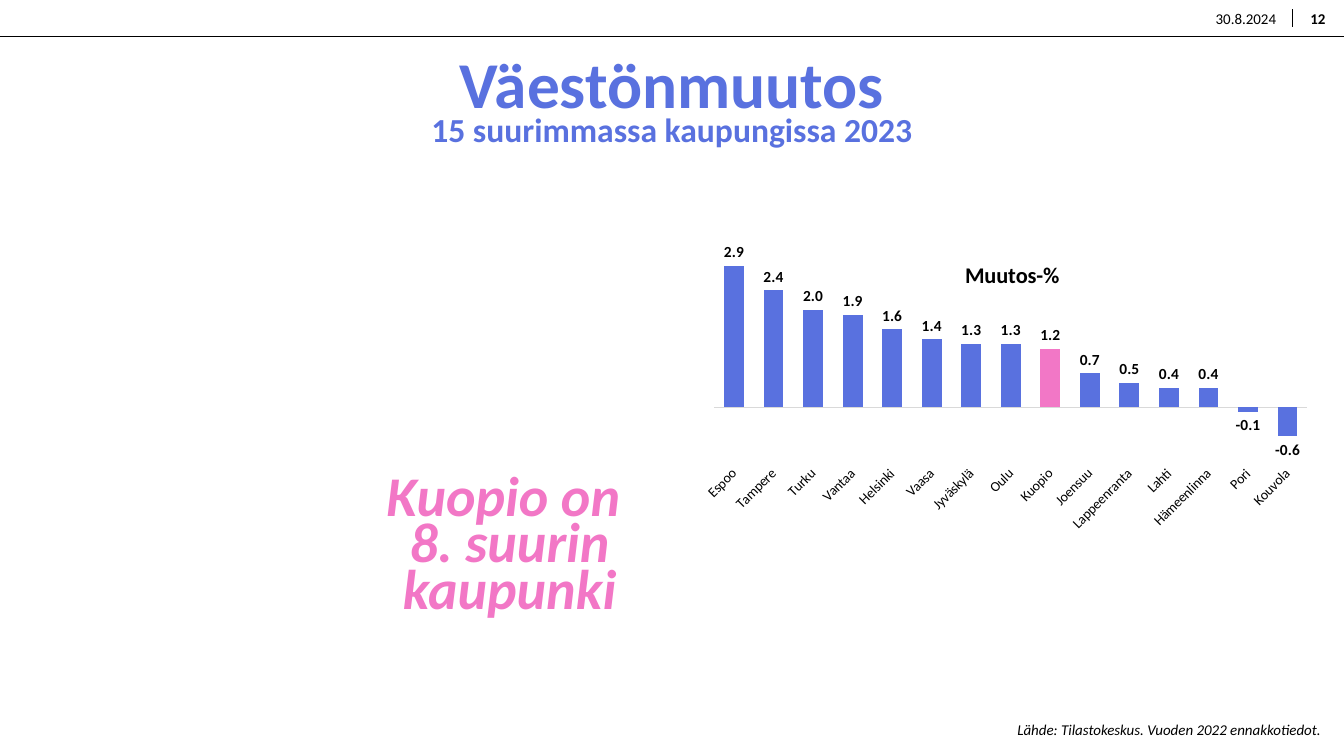
from lxml import etree
from pptx import Presentation
from pptx.chart.data import CategoryChartData
from pptx.dml.color import RGBColor
from pptx.enum.chart import XL_CHART_TYPE, XL_LABEL_POSITION, XL_TICK_LABEL_POSITION, XL_TICK_MARK
from pptx.enum.shapes import MSO_CONNECTOR
from pptx.enum.text import MSO_ANCHOR, PP_ALIGN
from pptx.oxml import parse_xml
from pptx.oxml.ns import nsdecls, qn
from pptx.util import Pt

COLUMNS = XL_CHART_TYPE.COLUMN_CLUSTERED
OUTSIDE = XL_LABEL_POSITION.OUTSIDE_END
LOW = XL_TICK_LABEL_POSITION.LOW
NO_TICK = XL_TICK_MARK.NONE
STRAIGHT = MSO_CONNECTOR.STRAIGHT
TOP, MIDDLE = MSO_ANCHOR.TOP, MSO_ANCHOR.MIDDLE
CENTER, RIGHT = PP_ALIGN.CENTER, PP_ALIGN.RIGHT

FONT = "Calibri"
BLACK, WHITE, GREY = "000000", "FFFFFF", "D9D9D9"
BLUE, PINK = "5971DF", "F277C6"
WIDTH, HEIGHT = 1344, 756
HEADER_HEIGHT = 36
DIVIDER_X = 1292

HEADER_LINES = [
    (0, HEADER_HEIGHT, WIDTH, HEADER_HEIGHT),
    (DIVIDER_X, 27, DIVIDER_X, 9),
]
HEADER_STYLE = {"size": 10.7, "anchor": MIDDLE, "inset": False}
TEXTS = [
    ((1200, 0, 92, HEADER_HEIGHT), ["30.8.2024"], HEADER_STYLE),
    ((DIVIDER_X, 0, 52, HEADER_HEIGHT), ["12"], {**HEADER_STYLE, "bold": True}),
    ((0, 47, WIDTH, 93), ["Väestönmuutos"],
     {"size": 46.7, "color": BLUE, "bold": True, "spacing": 0.9}),
    ((882, 716, 449, 28), ["Lähde: Tilastokeskus. Vuoden 2022 ennakkotiedot."],
     {"size": 10.7, "italic": True, "align": RIGHT}),
    ((346, 476, 327, 153), ["Kuopio on ", "8. suurin kaupunki"],
     {"size": 40, "color": PINK, "bold": True, "italic": True, "spacing": Pt(33.3)}),
    ((0, 104, WIDTH, 50), ["15 suurimmassa kaupungissa 2023"],
     {"size": 24, "color": BLUE, "bold": True}),
]

CHART_BOX = (672, 237, 671, 305)
PLOT_BOX = (42, 0, 593, 219)
TITLE_POSITION = (289, 19)
CHART_TITLE = "Muutos-%"
HIGHLIGHTED_CITY = "Kuopio"
POPULATION_CHANGE = {
    "Espoo": 2.9, "Tampere": 2.4, "Turku": 2.0, "Vantaa": 1.9, "Helsinki": 1.6,
    "Vaasa": 1.4, "Jyväskylä": 1.3, "Oulu": 1.3, "Kuopio": 1.2, "Joensuu": 0.7,
    "Lappeenranta": 0.5, "Lahti": 0.4, "Hämeenlinna": 0.4, "Pori": -0.1, "Kouvola": -0.6,
}


def px(length):
    return round(length * 914400 / 100.8)


def rgb(color):
    return RGBColor.from_string(color)


def style_font(font, size, color=BLACK, bold=False, italic=False):
    font.name, font.size = FONT, Pt(size)
    font.bold, font.italic = bold, italic
    font.color.rgb = rgb(color)


def add_line(slide, ends):
    line = slide.shapes.add_connector(STRAIGHT, *map(px, ends))
    line.line.color.rgb = rgb(BLACK)
    line.line.width = Pt(0.5)
    etree.SubElement(line._element.spPr, qn("a:effectLst"))


def add_text(slide, box, lines, size, color=BLACK, bold=False, italic=False,
             align=CENTER, anchor=TOP, spacing=None, inset=True):
    frame = slide.shapes.add_textbox(*map(px, box)).text_frame
    frame.word_wrap = True
    frame.vertical_anchor = anchor
    if not inset:
        frame.margin_left = frame.margin_right = frame.margin_top = frame.margin_bottom = 0
    for index, line in enumerate(lines):
        paragraph = frame.add_paragraph() if index else frame.paragraphs[0]
        paragraph.alignment = align
        paragraph.line_spacing = spacing
        run = paragraph.add_run()
        run.text = line
        style_font(run.font, size, color, bold, italic)


def manual_layout(x, y, width=None, height=None):
    """Return a chart layout from px measured inside the chart box."""
    parts = ['<c:xMode val="edge"/><c:yMode val="edge"/>']
    if width:
        parts.insert(0, '<c:layoutTarget val="inner"/>')
    for name, length, whole in (("x", x, CHART_BOX[2]), ("y", y, CHART_BOX[3]),
                                ("w", width, CHART_BOX[2]), ("h", height, CHART_BOX[3])):
        if length is not None:
            parts.append(f'<c:{name} val="{length / whole:.3f}"/>')
    return parse_xml(f'<c:layout {nsdecls("c")}><c:manualLayout>{"".join(parts)}'
                     '</c:manualLayout></c:layout>')


def set_chart_title(chart):
    chart.has_title = True
    title = chart.chart_title
    run = title.text_frame.paragraphs[0].add_run()
    run.text = CHART_TITLE
    style_font(run.font, 16, bold=True)
    element = title._element
    for layout in element.findall(qn("c:layout")):
        element.remove(layout)
    element.find(qn("c:tx")).addnext(manual_layout(*TITLE_POSITION))
    title.include_in_layout = True
    element.find(qn("c:overlay")).set("val", "1")


def set_axes(chart):
    values = chart.value_axis
    values.minimum_scale, values.maximum_scale = -1, 3.5
    values.has_major_gridlines = False
    values.visible = False
    cities = chart.category_axis
    cities.tick_label_position = LOW
    cities.major_tick_mark = cities.minor_tick_mark = NO_TICK
    cities.format.line.color.rgb = rgb(GREY)
    cities.format.line.width = Pt(0.75)
    style_font(cities.tick_labels.font, 10)
    cities._element.find(qn("c:txPr")).find(qn("a:bodyPr")).set("rot", "-2700000")


def add_change_chart(slide):
    data = CategoryChartData(number_format="0.0")
    data.categories = list(POPULATION_CHANGE)
    data.add_series(CHART_TITLE, list(POPULATION_CHANGE.values()))
    chart = slide.shapes.add_chart(COLUMNS, *map(px, CHART_BOX), data).chart
    style_font(chart.font, 10)
    chart.has_legend = False
    set_chart_title(chart)
    set_axes(chart)

    plot = chart.plots[0]
    plot.gap_width = 99
    plot.vary_by_categories = False
    series = plot.series[0]
    series.invert_if_negative = False
    series.format.fill.solid()
    series.format.fill.fore_color.rgb = rgb(BLUE)
    highlight = series.points[list(POPULATION_CHANGE).index(HIGHLIGHTED_CITY)].format.fill
    highlight.solid()
    highlight.fore_color.rgb = rgb(PINK)

    labels = series.data_labels
    labels.show_value = True
    labels.number_format, labels.number_format_is_linked = "0.0", False
    labels.position = OUTSIDE
    style_font(labels.font, 11, bold=True)

    plot_area = chart._chartSpace.chart.plotArea
    for layout in plot_area.findall(qn("c:layout")):
        plot_area.remove(layout)
    plot_area.insert(0, manual_layout(*PLOT_BOX))


def main():
    presentation = Presentation()
    presentation.slide_width, presentation.slide_height = px(WIDTH), px(HEIGHT)
    slide = presentation.slides.add_slide(presentation.slide_layouts[6])
    slide.background.fill.solid()
    slide.background.fill.fore_color.rgb = rgb(WHITE)
    for ends in HEADER_LINES:
        add_line(slide, ends)
    for box, lines, style in TEXTS:
        add_text(slide, box, lines, **style)
    add_change_chart(slide)
    presentation.save("out.pptx")


if __name__ == "__main__":
    main()
